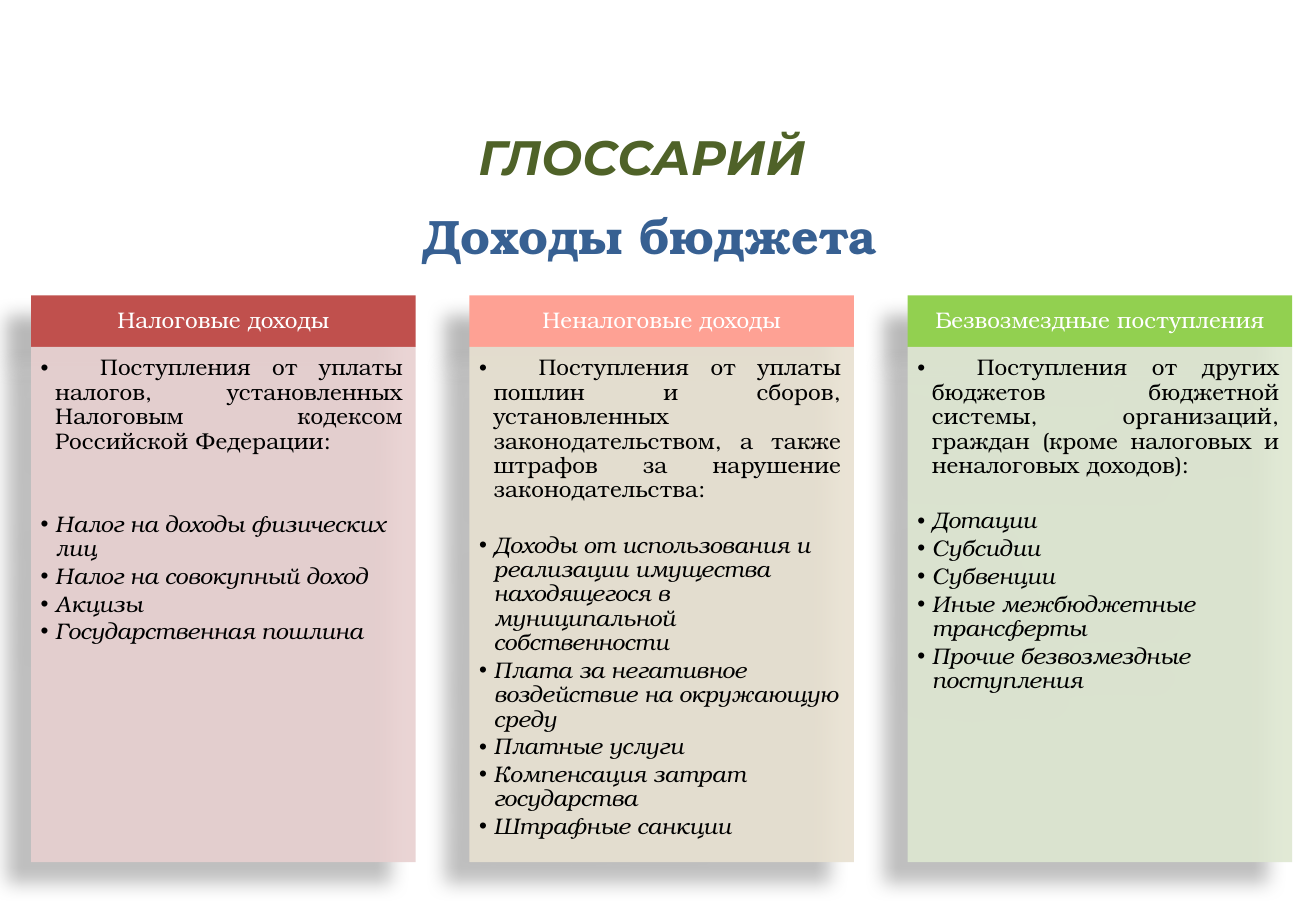
from lxml import etree
from pptx import Presentation
from pptx.dml.color import RGBColor
from pptx.enum.shapes import MSO_SHAPE
from pptx.enum.text import MSO_ANCHOR as ANCHOR, MSO_AUTO_SIZE as AUTO, PP_ALIGN as ALIGN
from pptx.oxml.ns import qn
from pptx.util import Pt

WHITE = RGBColor(0xFF, 0xFF, 0xFF)
BLACK = RGBColor(0x00, 0x00, 0x00)
OLIVE = RGBColor(0x4F, 0x62, 0x28)
BLUE = RGBColor(0x37, 0x60, 0x92)
RED = RGBColor(0xC0, 0x50, 0x4D)
SALMON = RGBColor(0xFE, 0xA1, 0x94)
GREEN = RGBColor(0x92, 0xD0, 0x50)
PALE_RED = RGBColor(0xE8, 0xD0, 0xD0)
PALE_SAND = RGBColor(0xE8, 0xE1, 0xD1)
PALE_GREEN = RGBColor(0xDE, 0xE7, 0xD1)

TITLE_FONT = "Montserrat"
TEXT_FONT = "TeX Gyre Bonum"

COLUMN_LEFT, COLUMN_TOP, COLUMN_STEP = 19.3, 183.6, 272.4
COLUMN_WIDTH, COLUMN_HEIGHT, HEADER_HEIGHT = 239, 352.2, 31.9
BULLET_INDENT, INTRO_TAB = 9, 28

# header, header colour, panel colour, gap after the definition, definition, items
COLUMNS = [
    ("Налоговые доходы", RED, PALE_RED, 36.5,
     "Поступления от уплаты налогов, установленных Налоговым кодексом "
     "Российской Федерации:",
     ["Налог на доходы физических лиц", "Налог на совокупный доход",
      "Акцизы", "Государственная пошлина"]),
    ("Неналоговые доходы", SALMON, PALE_SAND, 19.3,
     "Поступления от уплаты пошлин и сборов, установленных "
     "законодательством, а также штрафов за нарушение законодательства:",
     ["Доходы от использования и реализации имущества находящегося "
      "в муниципальной собственности",
      "Плата за негативное воздействие на окружающую среду",
      "Платные услуги", "Компенсация затрат государства",
      "Штрафные санкции"]),
    ("Безвозмездные поступления", GREEN, PALE_GREEN, 19.3,
     "Поступления от других бюджетов бюджетной системы, организаций, "
     "граждан (кроме налоговых и неналоговых доходов):",
     ["Дотации", "Субсидии", "Субвенции", "Иные межбюджетные трансферты",
      "Прочие безвозмездные поступления"]),
]


def setup_frame(tf, margins, anchor):
    """Margins are left, top, right, bottom in points."""
    tf.word_wrap = True
    tf.auto_size = AUTO.NONE
    tf.vertical_anchor = anchor
    (tf.margin_left, tf.margin_top,
     tf.margin_right, tf.margin_bottom) = map(Pt, margins)


def write(p, text, size=14, font=TEXT_FONT, color=BLACK, bold=False,
          italic=False, align=ALIGN.LEFT, spacing=0.9, after=0):
    p.alignment = align
    p.line_spacing = spacing
    p.space_before = Pt(0)
    p.space_after = Pt(after)
    r = p.add_run()
    r.text = text
    r.font.size = Pt(size)
    r.font.name = font
    r.font.color.rgb = color
    r.font.bold = bold
    r.font.italic = italic


def add_bullet(p, tab=None):
    pPr = p._p.get_or_add_pPr()
    pPr.set("marL", str(Pt(BULLET_INDENT)))
    pPr.set("indent", str(-Pt(BULLET_INDENT)))
    etree.SubElement(pPr, qn("a:buFont"), typeface="Arial")
    etree.SubElement(pPr, qn("a:buChar"), char="•")
    if tab:
        tabs = etree.SubElement(pPr, qn("a:tabLst"))
        etree.SubElement(tabs, qn("a:tab"), pos=str(Pt(tab)), algn="l")


def add_shadow(sp):
    effects = etree.SubElement(sp._element.spPr, qn("a:effectLst"))
    shadow = etree.SubElement(
        effects, qn("a:outerShdw"), blurRad=str(Pt(11.8)),
        dist=str(Pt(19.7)), dir=str(141 * 60000), algn="ctr", rotWithShape="0")
    black = etree.SubElement(shadow, qn("a:srgbClr"), val=str(BLACK))
    etree.SubElement(black, qn("a:alpha"), val="28000")


def add_block(s, left, top, width, height, color, opacity=100):
    sp = s.shapes.add_shape(MSO_SHAPE.RECTANGLE, Pt(left), Pt(top),
                            Pt(width), Pt(height))
    sp.fill.solid()
    sp.fill.fore_color.rgb = color
    sp.line.fill.background()
    if opacity < 100:
        fill = sp._element.spPr.find(qn("a:solidFill"))
        etree.SubElement(fill[0], qn("a:alpha"), val=str(opacity * 1000))
    add_shadow(sp)
    return sp


def add_title(s, left, top, width, height):
    title = s.shapes.title
    title.left, title.top = Pt(left), Pt(top)
    title.width, title.height = Pt(width), Pt(height)
    tf = title.text_frame
    setup_frame(tf, (8, 4, 8, 4), ANCHOR.MIDDLE)
    write(tf.paragraphs[0], "ГЛОССАРИЙ", size=30, font=TITLE_FONT, color=OLIVE,
          bold=True, italic=True, align=ALIGN.CENTER, spacing=Pt(49.4))


def add_subtitle(s, left, top, width, height):
    box = s.shapes.add_textbox(Pt(left), Pt(top), Pt(width), Pt(height))
    tf = box.text_frame
    setup_frame(tf, (8.6, 4.3, 8.6, 4.3), ANCHOR.TOP)
    write(tf.paragraphs[0], "Доходы бюджета", size=30, color=BLUE, bold=True,
          align=ALIGN.CENTER, spacing=1.0)


def add_column(s, left, top, width, height, column):
    header, header_color, panel_color, gap, definition, items = column
    head = add_block(s, left, top, width, HEADER_HEIGHT, header_color)
    tf = head.text_frame
    setup_frame(tf, (8, 4.5, 8, 4.5), ANCHOR.MIDDLE)
    write(tf.paragraphs[0], header, color=WHITE, align=ALIGN.CENTER)

    panel = add_block(s, left, top + HEADER_HEIGHT, width,
                      height - HEADER_HEIGHT, panel_color, opacity=90)
    tf = panel.text_frame
    setup_frame(tf, (6, 6, 8, 9), ANCHOR.TOP)
    p = tf.paragraphs[0]
    write(p, "\t" + definition, align=ALIGN.JUSTIFY, after=gap)
    add_bullet(p, tab=BULLET_INDENT + INTRO_TAB)
    for item in items:
        p = tf.add_paragraph()
        write(p, item, italic=True, after=2.1)
        add_bullet(p)


def main():
    prs = Presentation()
    prs.slide_width, prs.slide_height = Pt(817.9), Pt(571)
    s = prs.slides.add_slide(prs.slide_layouts[5])
    add_title(s, 9.4, 56.2, 779, 67.7)
    for i, column in enumerate(COLUMNS):
        add_column(s, COLUMN_LEFT + i * COLUMN_STEP, COLUMN_TOP,
                   COLUMN_WIDTH, COLUMN_HEIGHT, column)
    add_subtitle(s, 0, 123.8, 807.8, 45.4)
    prs.save("out.pptx")


if __name__ == "__main__":
    main()
